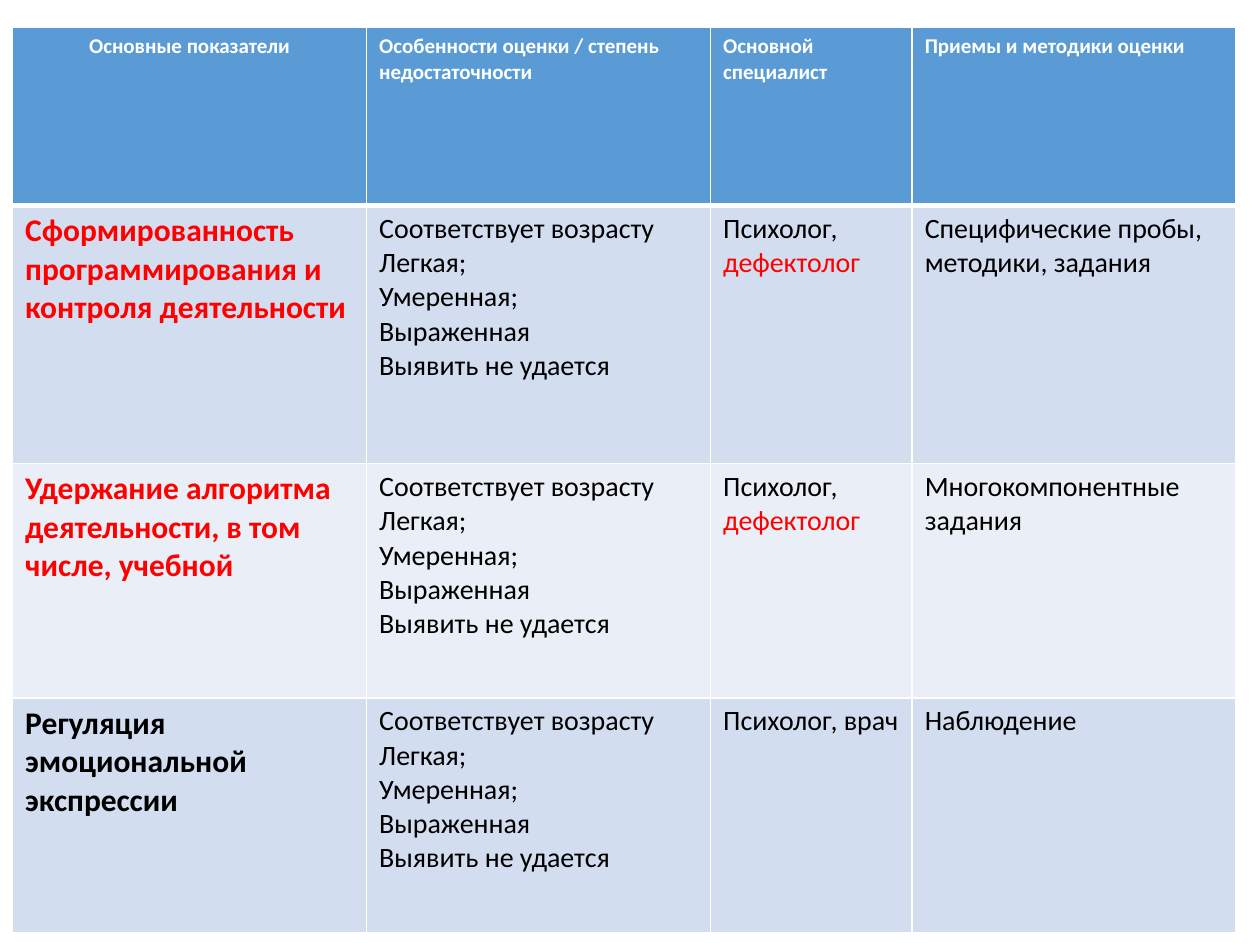
"""Build a slide with a table of assessment indicators."""
import dataclasses

import lxml.etree
import pptx
import pptx.dml.color
import pptx.enum.text
import pptx.oxml.ns
import pptx.util

Inches = pptx.util.Inches
Pt = pptx.util.Pt


@dataclasses.dataclass(frozen=True)
class Theme:
    font: str = "Calibri"
    white: str = "FFFFFF"
    black: str = "000000"
    red: str = "FF0000"
    head: str = "5B9BD5"
    bands: tuple = ("D2DEEF", "EAEFF7")
    small: int = 12
    body: int = 16
    large: int = 18
    thin: int = 1
    thick: int = 3


class Deck:
    def __init__(self, theme):
        self.theme = theme
        self.file = pptx.Presentation()
        self.file.slide_width = Inches(10)
        self.file.slide_height = Inches(7.5)
        self.slide = self.file.slides.add_slide(self.file.slide_layouts[6])

    def table(self, left, top, cols, rows):
        frame = self.slide.shapes.add_table(
            len(rows), len(cols), Inches(left), Inches(top),
            Inches(sum(cols)), Inches(sum(rows)))
        for col, width in zip(frame.table.columns, cols):
            col.width = Inches(width)
        for row, height in zip(frame.table.rows, rows):
            row.height = Inches(height)
        return frame.table

    def edge(self, cell, side, width):
        qn = pptx.oxml.ns.qn
        line = lxml.etree.Element(qn(f"a:ln{side}"), w=str(Pt(width)))
        fill = lxml.etree.SubElement(line, qn("a:solidFill"))
        lxml.etree.SubElement(fill, qn("a:srgbClr"), val=self.theme.white)
        return line

    def cell(self, cell, lines, fill, size, color, bold, top, base):
        rgb = pptx.dml.color.RGBColor.from_string
        cell.fill.solid()
        cell.fill.fore_color.rgb = rgb(fill)
        thin = self.theme.thin
        sides = (("L", thin), ("R", thin), ("T", top), ("B", base))
        props = cell._tc.get_or_add_tcPr()
        for spot, (side, width) in enumerate(sides):
            props.insert(spot, self.edge(cell, side, width))
        frame = cell.text_frame
        for index, line in enumerate(lines):
            para = frame.add_paragraph() if index else frame.paragraphs[0]
            para.font.name = self.theme.font
            para.font.size = Pt(size)
            para.font.bold = bold
            para.font.color.rgb = rgb(color)
            for text, tint in [(line, None)] if isinstance(line, str) else line:
                run = para.add_run()
                run.text = text
                if tint:
                    run.font.color.rgb = rgb(tint)


def main():
    theme = Theme()
    deck = Deck(theme)
    heads = ("Основные показатели", "Особенности оценки / степень недостаточности",
             "Основной специалист", "Приемы и методики оценки")
    grades = ("Соответствует возрасту", "Легкая;", "Умеренная;",
              "Выраженная", "Выявить не удается")
    pair = [("Психолог, ", None), ("дефектолог", theme.red)]
    rows = (
        ("Сформированность программирования и контроля деятельности",
         theme.red, pair, "Специфические пробы, методики, задания"),
        ("Удержание алгоритма деятельности, в том числе, учебной",
         theme.red, pair, "Многокомпонентные задания"),
        ("Регуляция эмоциональной экспрессии",
         theme.black, "Психолог, врач", "Наблюдение"),
    )
    table = deck.table(0.1, 0.22, (2.81, 2.73, 1.6, 2.57),
                       (1.41, 2.05, 1.86, 1.86))

    for col, head in enumerate(heads):
        deck.cell(table.cell(0, col), [head], theme.head, theme.small,
                  theme.white, True, theme.thin, theme.thick)
    table.cell(0, 0).text_frame.paragraphs[0].alignment = (
        pptx.enum.text.PP_ALIGN.CENTER)

    for row, (name, color, staff, means) in enumerate(rows, 1):
        fill = theme.bands[(row - 1) % 2]
        top = theme.thick if row == 1 else theme.thin
        deck.cell(table.cell(row, 0), [name], fill, theme.large,
                  color, True, top, theme.thin)
        for col, lines in enumerate((grades, [staff], [means]), 1):
            deck.cell(table.cell(row, col), lines, fill, theme.body,
                      theme.black, False, top, theme.thin)
    deck.file.save("out.pptx")


if __name__ == "__main__":
    main()
